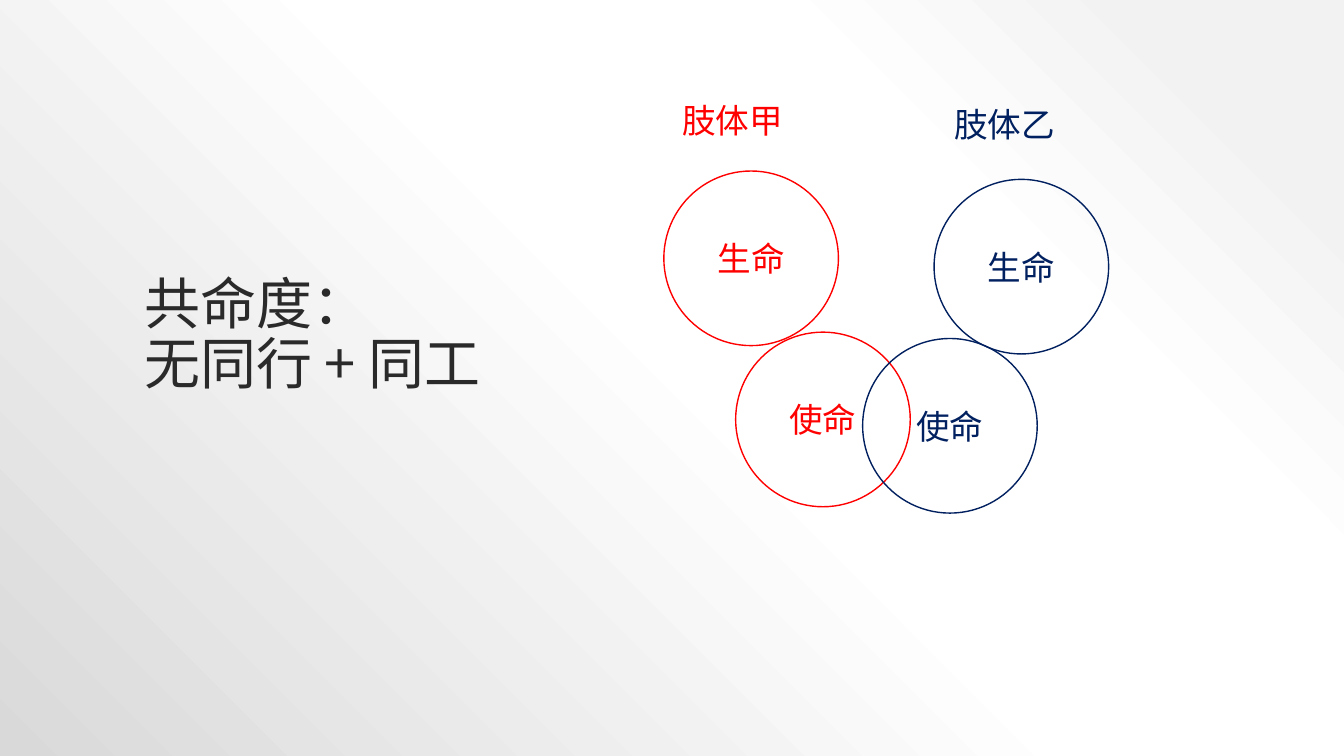
from dataclasses import dataclass

from pptx import Presentation
from pptx import util as u
from pptx.dml.color import RGBColor
from pptx.enum import shapes, text
from pptx.oxml import parse_xml
from pptx.oxml.ns import nsdecls


@dataclass(frozen=True)
class Theme:
    ink: str = "2A2A2A"
    red: str = "FF0000"
    navy: str = "002060"
    backdrop: tuple = ((10, "F2F2F2"), (28, "FFFFFF"), (48, "FFFFFF"), (100, "D9D9D9"))
    title_font: str = "Noto Sans CJK SC"
    body_font: str = "Quicksand"
    title_size: int = 40
    body_size: int = 24
    line_width: float = 1
    line_spacing: float = 0.9


class SlideBuilder:
    def __init__(self, slide, theme):
        self.slide = slide
        self.theme = theme

    def _write(self, sp, words, font, size, color, align, spacing=None):
        tf = sp.text_frame
        tf.word_wrap = True
        p = tf.paragraphs[0]
        p.text = words
        p.alignment = align
        p.line_spacing = spacing
        p.font.name = font
        p.font.size = u.Pt(size)
        p.font.color.rgb = RGBColor.from_string(color)
        return tf

    def background(self):
        """Radial gradient centred on the top right corner."""
        stops = "".join(
            f'<a:gs pos="{pos * 1000}"><a:srgbClr val="{color}"/></a:gs>'
            for pos, color in self.theme.backdrop)
        bg = parse_xml(
            f'<p:bg {nsdecls("p", "a")}><p:bgPr><a:gradFill rotWithShape="1">'
            f'<a:gsLst>{stops}</a:gsLst><a:path path="circle">'
            '<a:fillToRect l="100000" b="100000"/></a:path></a:gradFill>'
            '<a:effectLst/></p:bgPr></p:bg>')
        self.slide.element.cSld.insert(0, bg)

    def title(self, words, left, top, width, height):
        t = self.theme
        sp = self.slide.shapes.title
        sp.left, sp.top, sp.width, sp.height = map(u.Cm, (left, top, width, height))
        tf = self._write(sp, words, t.title_font, t.title_size, t.ink,
                         text.PP_ALIGN.LEFT, t.line_spacing)
        tf.vertical_anchor = text.MSO_ANCHOR.BOTTOM
        tf.auto_size = text.MSO_AUTO_SIZE.NONE

    def circle(self, words, left, top, diameter, color):
        t = self.theme
        sp = self.slide.shapes.add_shape(
            shapes.MSO_SHAPE.OVAL, u.Cm(left), u.Cm(top), u.Cm(diameter), u.Cm(diameter))
        sp.shadow.inherit = False
        sp.fill.background()
        sp.line.color.rgb = RGBColor.from_string(color)
        sp.line.width = u.Pt(t.line_width)
        tf = self._write(sp, words, t.body_font, t.body_size, color, text.PP_ALIGN.CENTER)
        tf.vertical_anchor = text.MSO_ANCHOR.MIDDLE

    def label(self, words, left, top, width, height, color):
        t = self.theme
        sp = self.slide.shapes.add_textbox(*map(u.Cm, (left, top, width, height)))
        tf = self._write(sp, words, t.body_font, t.body_size, color,
                         text.PP_ALIGN.LEFT, t.line_spacing)
        tf.auto_size = text.MSO_AUTO_SIZE.SHAPE_TO_FIT_TEXT


def main():
    prs = Presentation()
    prs.slide_width, prs.slide_height = u.Cm(33.87), u.Cm(19.05)
    theme = Theme()
    builder = SlideBuilder(prs.slides.add_slide(prs.slide_layouts[5]), theme)

    # Background and title
    builder.background()
    builder.title("共命度：\v无同行 + 同工", 3.38, 6.45, 10.54, 3.68)

    # Each member: label above a life circle and a mission circle
    diameter = 4.4
    members = (
        ("肢体甲", theme.red, (16.94, 2.51), (16.73, 4.31), (18.54, 8.37)),
        ("肢体乙", theme.navy, (23.8, 2.62), (23.54, 4.52), (21.74, 8.53)),
    )
    for name, color, label_at, life_at, mission_at in members:
        builder.circle("生命", *life_at, diameter, color)
        builder.circle("使命", *mission_at, diameter, color)
        builder.label(name, *label_at, 3.99, 1.17, color)

    prs.save("out.pptx")


if __name__ == "__main__":
    main()
